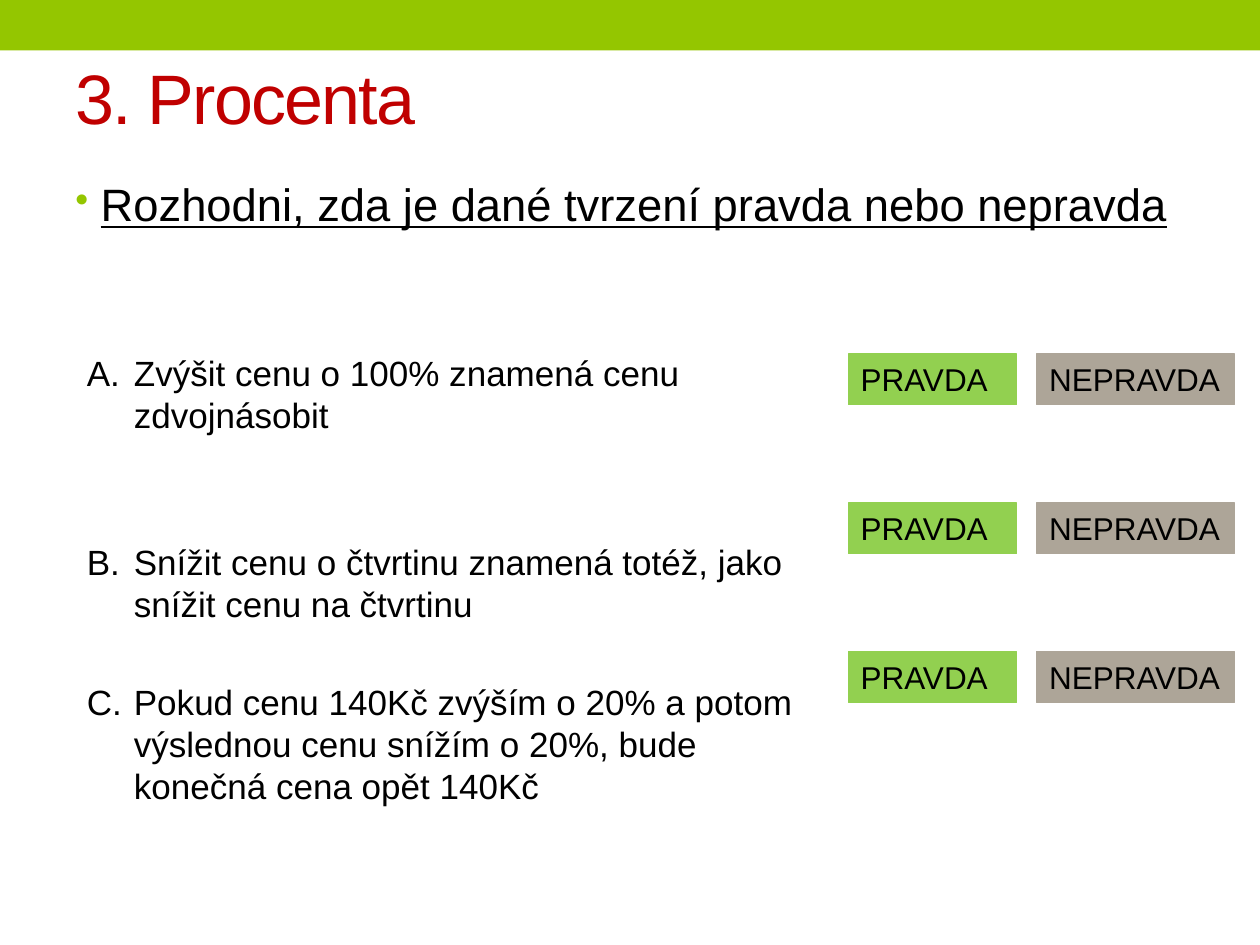
"""Build a true-or-false quiz slide about percentages."""
from dataclasses import dataclass

from lxml import etree
from pptx import Presentation
from pptx import util as u
from pptx.dml.color import RGBColor
from pptx.enum import shapes, text
from pptx.oxml.ns import qn

FONT = "Arial"
COLORS = {
    "band": "94C600",
    "title": "C00000",
    "text": "000000",
    "true": "92D050",
    "false": "ADA598",
}


@dataclass(frozen=True)
class Area:
    left: float
    top: float
    width: float
    height: float

    def lengths(self) -> list:
        return [u.Cm(value) for value in (self.left, self.top, self.width, self.height)]


@dataclass(frozen=True)
class Answer:
    label: str
    color: str
    left: float
    width: float


@dataclass(frozen=True)
class Claim:
    wording: str
    space_before: float


ANSWERS = [
    Answer("PRAVDA", "true", 17.1, 3.4),
    Answer("NEPRAVDA", "false", 20.9, 3.99),
]
CLAIMS = [
    Claim("Zvýšit cenu o 100% znamená cenu zdvojnásobit", 0),
    Claim("Snížit cenu o čtvrtinu znamená totéž, jako snížit cenu na čtvrtinu", 60),
    Claim(
        "Pokud cenu 140Kč zvýším o 20% a potom výslednou cenu snížím o 20%, "
        "bude konečná cena opět 140Kč",
        32,
    ),
]
ANSWER_TOP, ANSWER_STEP, ANSWER_HEIGHT = 7.14, 3.0, 1.02


def rgb(name: str) -> RGBColor:
    return RGBColor.from_string(COLORS[name])


def style_paragraph(paragraph, size: float, color: str = "text"):
    paragraph.alignment = text.PP_ALIGN.LEFT
    span = paragraph.runs[0]
    span.font.name = FONT
    span.font.size = u.Pt(size)
    span.font.color.rgb = rgb(color)
    return span


def add_bullet(paragraph, indent: float, tag: str, **attributes: str) -> None:
    properties = paragraph._p.get_or_add_pPr()
    properties.set("marL", str(u.Cm(indent)))
    properties.set("indent", str(-u.Cm(indent)))
    etree.SubElement(properties, qn(tag), attributes)


def add_text_box(page, area: Area, wording: str):
    box = page.shapes.add_textbox(*area.lengths())
    box.text_frame.word_wrap = True
    box.text_frame.text = wording
    return box.text_frame


def add_rectangle(page, area: Area, color: str):
    box = page.shapes.add_shape(shapes.MSO_SHAPE.RECTANGLE, *area.lengths())
    box.shadow.inherit = False
    box.fill.solid()
    box.fill.fore_color.rgb = rgb(color)
    box.line.fill.background()
    return box


def add_title(page) -> None:
    frame = add_text_box(page, Area(1.27, 0.76, 22.86, 2.36), "3. Procenta")
    frame.vertical_anchor = text.MSO_ANCHOR.MIDDLE
    span = style_paragraph(frame.paragraphs[0], 40, "title")
    span.font._element.set("spc", "-100")


def add_task(page) -> None:
    frame = add_text_box(
        page,
        Area(1.27, 3.33, 22.86, 1.8),
        "Rozhodni, zda je dané tvrzení pravda nebo nepravda",
    )
    frame.margin_top = u.Cm(0.23)
    paragraph = frame.paragraphs[0]
    style_paragraph(paragraph, 25.9).font.underline = True
    properties = paragraph._p.get_or_add_pPr()
    bullet_color = etree.SubElement(properties, qn("a:buClr"))
    etree.SubElement(bullet_color, qn("a:srgbClr"), val=COLORS["band"])
    etree.SubElement(properties, qn("a:buSzPct"), val="85000")
    add_bullet(paragraph, 0.51, "a:buChar", char="•")


def add_claims(page) -> None:
    wording = "\n".join(claim.wording for claim in CLAIMS)
    frame = add_text_box(page, Area(1.5, 5.92, 15.01, 10.39), wording)
    frame.margin_top = u.Cm(1.17)
    for paragraph, claim in zip(frame.paragraphs, CLAIMS):
        style_paragraph(paragraph, 20)
        paragraph.line_spacing = u.Pt(24)
        paragraph.space_before = u.Pt(claim.space_before)
        add_bullet(paragraph, 0.95, "a:buAutoNum", type="alphaUcPeriod")


def add_answer(page, answer: Answer, row: int) -> None:
    top = ANSWER_TOP + row * ANSWER_STEP
    area = Area(answer.left, top, answer.width, ANSWER_HEIGHT)
    box = add_rectangle(page, area, answer.color)
    box.line.color.rgb = rgb(answer.color)
    box.line.width = u.Pt(0.75)
    frame = box.text_frame
    frame.word_wrap = True
    frame.vertical_anchor = text.MSO_ANCHOR.TOP
    frame.text = answer.label
    style_paragraph(frame.paragraphs[0], 18)


def main() -> None:
    deck = Presentation()
    deck.slide_width, deck.slide_height = u.Cm(25.4), u.Cm(19.05)
    page = deck.slides.add_slide(deck.slide_layouts[6])
    add_rectangle(page, Area(0, 0, 25.4, 1.02), "band")
    add_title(page)
    add_task(page)
    add_claims(page)
    for row in range(len(CLAIMS)):
        for answer in ANSWERS:
            add_answer(page, answer, row)
    deck.save("out.pptx")


if __name__ == "__main__":
    main()
